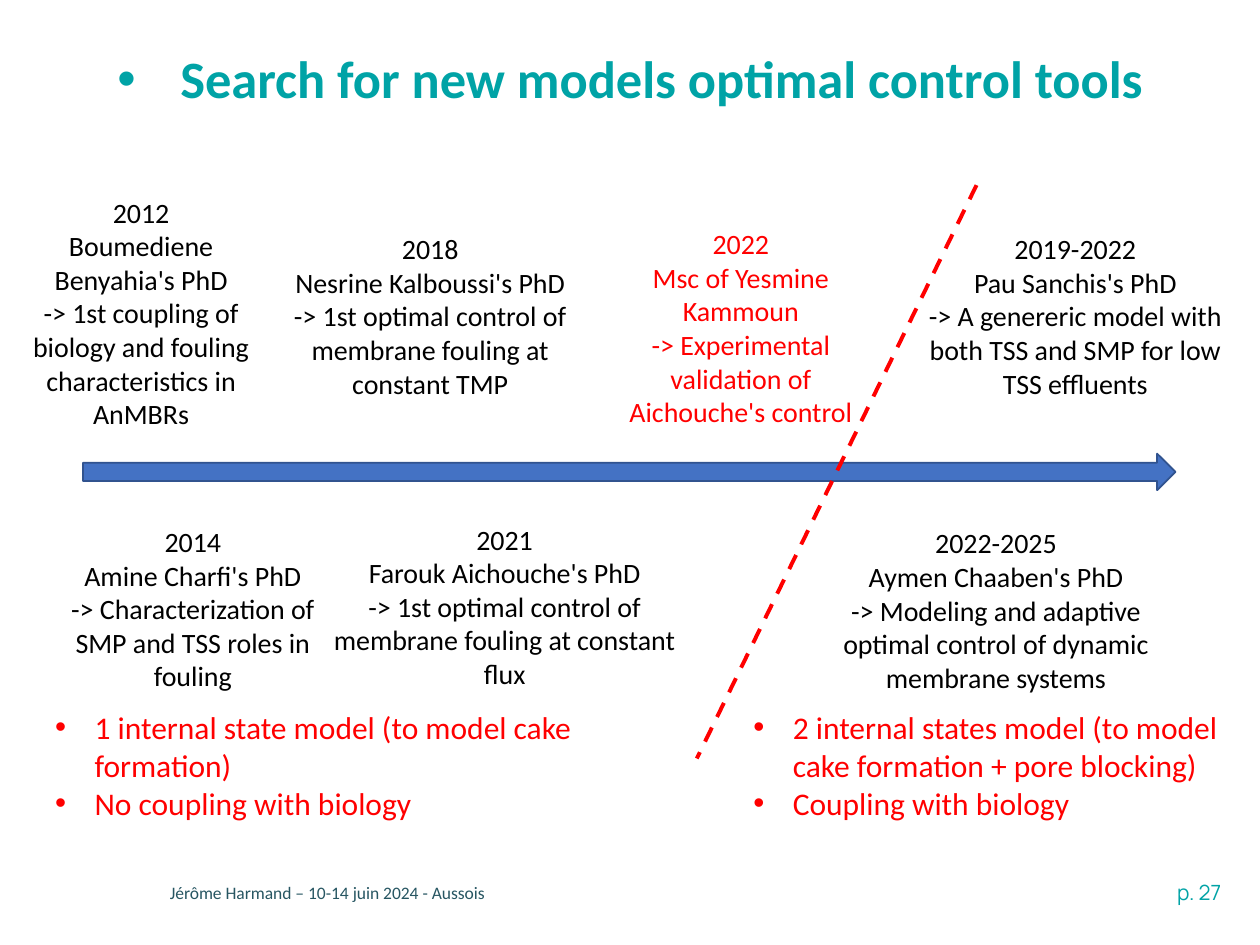
from lxml import etree
from pptx import Presentation
from pptx.dml.color import RGBColor
from pptx.enum.dml import MSO_LINE
from pptx.enum.shapes import MSO_CONNECTOR, MSO_SHAPE
from pptx.enum.text import MSO_ANCHOR, MSO_AUTO_SIZE, PP_ALIGN
from pptx.oxml.ns import qn
from pptx.util import Pt

LEFT, CENTER, RIGHT = PP_ALIGN.LEFT, PP_ALIGN.CENTER, PP_ALIGN.RIGHT
MIDDLE = MSO_ANCHOR.MIDDLE
NO_AUTOFIT = MSO_AUTO_SIZE.NONE
RIGHT_ARROW = MSO_SHAPE.RIGHT_ARROW
STRAIGHT = MSO_CONNECTOR.STRAIGHT
DASH = MSO_LINE.DASH

COLORS = {
    "teal": "00A3A6",
    "footer": "275662",
    "black": "000000",
    "red": "FF0000",
    "arrow": "4472C4",
    "arrow_line": "31538F",
}


def write_paragraphs(frame, lines, size, color, alignment=LEFT, indent=0, font="Calibri", bold=False):
    frame.word_wrap = True
    frame.auto_size = NO_AUTOFIT
    for index, line in enumerate(lines):
        paragraph = frame.paragraphs[0] if index == 0 else frame.add_paragraph()
        paragraph.alignment = alignment
        if indent:
            properties = paragraph._p.get_or_add_pPr()
            properties.set("marL", str(Pt(indent)))
            properties.set("indent", str(-Pt(indent)))
            etree.SubElement(properties, qn("a:buFont"), typeface="Arial")
            etree.SubElement(properties, qn("a:buChar"), char="•")
        run = paragraph.add_run()
        run.text = line
        run.font.name = font
        run.font.size = Pt(size)
        run.font.bold = bold
        run.font.color.rgb = RGBColor.from_string(COLORS[color])


def add_text(left, top, width, height, lines, size, color, **options):
    box = slide.shapes.add_textbox(Pt(left), Pt(top), Pt(width), Pt(height))
    write_paragraphs(box.text_frame, lines, size, color, **options)


presentation = Presentation()
presentation.slide_width = Pt(720)
presentation.slide_height = Pt(540)
slide = presentation.slides.add_slide(presentation.slide_layouts[5])

title = slide.shapes.title
title.left, title.top, title.width, title.height = Pt(67), Pt(11.5), Pt(603.4), Pt(69.8)
title.text_frame.margin_left = 0
title.text_frame.vertical_anchor = MIDDLE
write_paragraphs(title.text_frame, ["Search for new models optimal control tools"],
                 30, "teal", indent=36, bold=True)
title.text_frame.paragraphs[0].line_spacing = 0.9

add_text(540.7, 499, 164.2, 21.6, ["p. 27"], 12, "teal", alignment=RIGHT, font="Manrope")
add_text(90, 500.4, 528.5, 19.4, ["Jérôme Harmand – 10-14 juin 2024 - Aussois"], 10, "footer")

timeline = slide.shapes.add_shape(RIGHT_ARROW, Pt(47.5), Pt(259.2), Pt(624.2), Pt(20.9))
timeline.shadow.inherit = False
timeline.fill.solid()
timeline.fill.fore_color.rgb = RGBColor.from_string(COLORS["arrow"])
timeline.line.color.rgb = RGBColor.from_string(COLORS["arrow_line"])
timeline.line.width = Pt(1)

milestones = [
    (6.5, 108, 148.3, 143.3, "black", "2012", "Boumediene Benyahia's PhD",
     "-> 1st coupling of biology and fouling characteristics in AnMBRs"),
    (24.5, 296.2, 171.4, 104.4, "black", "2014", "Amine Charfi's PhD",
     "-> Characterization of SMP and TSS roles in fouling"),
    (149, 128.9, 193.7, 104.4, "black", "2018", "Nesrine Kalboussi's PhD",
     "-> 1st optimal control of membrane fouling at constant TMP"),
    (172.8, 294.8, 231.1, 104.4, "black", "2021", "Farouk Aichouche's PhD",
     "-> 1st optimal control of membrane fouling at constant flux"),
    (342.7, 126, 161.3, 123.8, "red", "2022", "Msc of Yesmine Kammoun",
     "-> Experimental validation of Aichouche's control"),
    (518.4, 128.9, 192.2, 104.4, "black", "2019-2022", "Pau Sanchis's PhD",
     "-> A genereric model with both TSS and SMP for low TSS effluents"),
    (453.6, 297, 231.1, 104.4, "black", "2022-2025", "Aymen Chaaben's PhD",
     "-> Modeling and adaptive optimal control of dynamic membrane systems"),
]
for left, top, width, height, color, *lines in milestones:
    add_text(left, top, width, height, lines, 16, color, alignment=CENTER)

divider = slide.shapes.add_connector(STRAIGHT, Pt(558), Pt(105.8), Pt(398.2), Pt(433.4))
divider.line.color.rgb = RGBColor.from_string(COLORS["red"])
divider.line.width = Pt(2.25)
divider.line.dash_style = DASH
etree.SubElement(divider._element.spPr, qn("a:effectLst"))

summaries = [
    (24.5, 341.3, "1 internal state model (to model cake formation)", "No coupling with biology"),
    (423.4, 286.6, "2 internal states model (to model cake formation + pore blocking)",
     "Coupling with biology"),
]
for left, width, *lines in summaries:
    add_text(left, 401, width, 72.7, lines, 18, "red", indent=22.5)

presentation.save("out.pptx")
